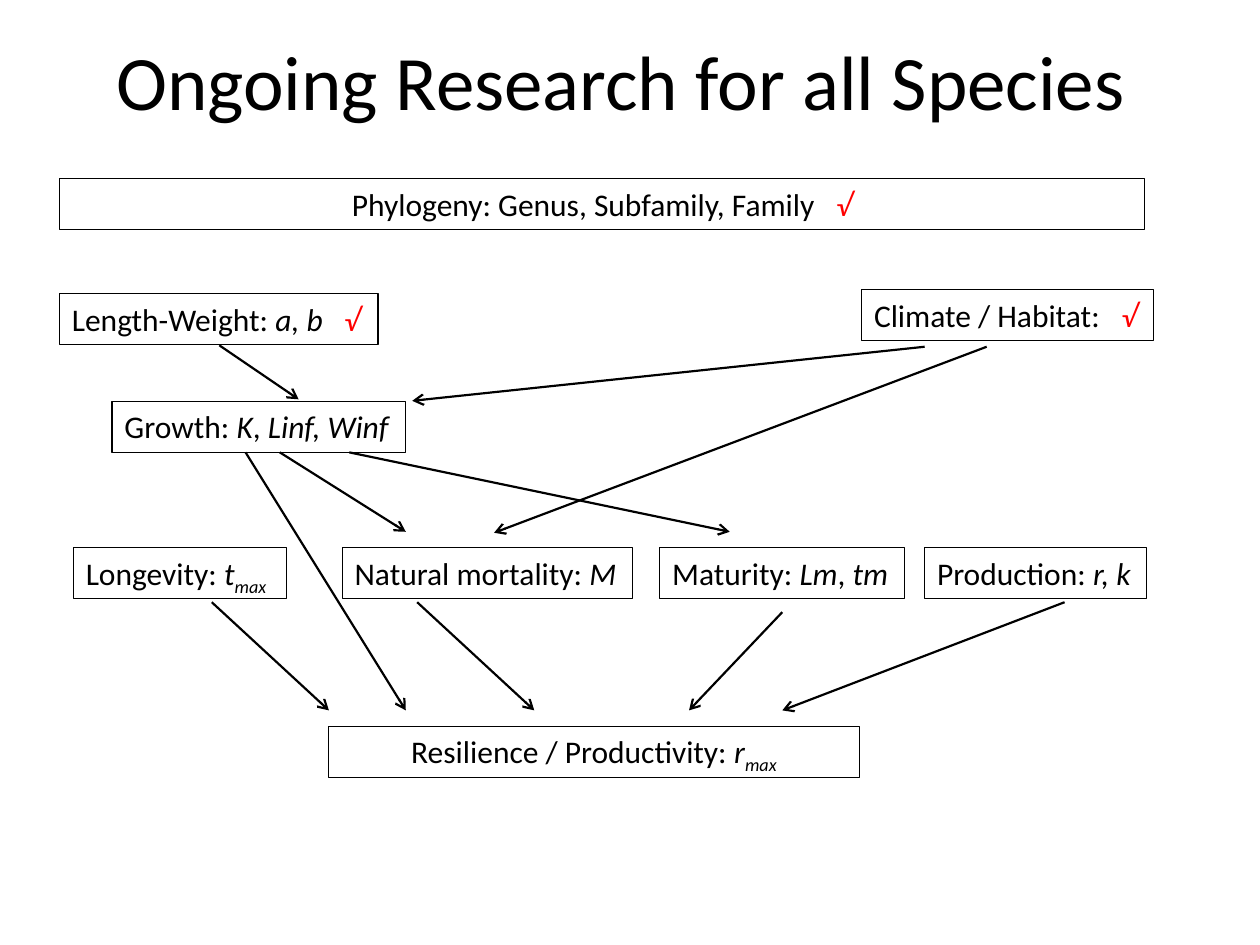
from lxml import etree
from pptx import Presentation
from pptx.dml.color import RGBColor
from pptx.enum import shapes, text
from pptx.oxml import ns
from pptx.util import Cm, Pt


def color(hex_value):
    return RGBColor.from_string(hex_value)


def add_run(paragraph, wording, style):
    """Append a run; style holds font values, plus optional spc and baseline."""
    run = paragraph.add_run()
    run.text = wording
    look = {"name": "Calibri", "size": Pt(18), "italic": False, **style}
    run.font.color.rgb = color(look.pop("color", "000000"))
    for key in ("spc", "baseline"):
        if key in look:
            run.font._element.set(key, look.pop(key))
    for key, value in look.items():
        setattr(run.font, key, value)


prs = Presentation()
prs.slide_width, prs.slide_height = Cm(25.4), Cm(19.05)
slide = prs.slides.add_slide(prs.slide_layouts[5])

# Title
title = slide.shapes.title
title.left, title.top, title.width, title.height = Cm(1.09), Cm(0), Cm(22.86), Cm(3.23)
title.text_frame.vertical_anchor = text.MSO_ANCHOR.MIDDLE
heading = title.text_frame.paragraphs[0]
heading.alignment = text.PP_ALIGN.CENTER
add_run(heading, "Ongoing Research for all Species", {"size": Pt(44)})

# Run styles shared by the boxes
plain = {}
italic = {"italic": True}
subscript = {"italic": True, "baseline": "-25000"}
done = [(" ", {"spc": "810"}), ("√", {"italic": True, "color": "FF0000"})]

# Boxes: left, top, width (cm), alignment, runs
left, center = text.PP_ALIGN.LEFT, text.PP_ALIGN.CENTER
trait_top = 11.04
boxes = [
    (1.2, 3.6, 21.87, center, [("Phylogeny: Genus, Subfamily, Family", plain), *done]),
    (1.2, 5.92, 6.42, left, [("Length-Weight: ", plain), ("a, b", italic), *done]),
    (17.37, 5.84, 5.89, left, [("Climate / Habitat:", plain), *done]),
    (2.26, 8.09, 5.91, left, [("Growth: ", plain), ("K", italic), (", ", plain),
                              ("Linf, Winf", italic)]),
    (1.48, trait_top, 4.3, left, [("Longevity: ", plain), ("t", italic),
                                  ("max", subscript)]),
    (6.9, trait_top, 5.85, left, [("Natural mortality: ", plain), ("M", italic)]),
    (13.3, trait_top, 4.93, left, [("Maturity: ", plain), ("Lm", italic), (", ", plain),
                                   ("tm", italic)]),
    (18.64, trait_top, 4.47, left, [("Production: ", plain), ("r, k", italic)]),
    (6.62, 14.64, 10.71, center, [("Resilience / Productivity: ", plain), ("r", italic),
                                  ("max", subscript)]),
]
for x, y, width, alignment, runs in boxes:
    box = slide.shapes.add_textbox(Cm(x), Cm(y), Cm(width), Cm(1.03))
    box.line.color.rgb = color("000000")
    box.line.width = Pt(0.75)
    frame = box.text_frame
    frame.word_wrap = True
    if alignment == left:
        frame.margin_right = 0
    label = frame.paragraphs[0]
    label.alignment = alignment
    for wording, style in runs:
        add_run(label, wording, style)

# Arrows: start x, start y, end x, end y (cm)
growth_bottom, trait_bottom, resilience_gap = 9.12, 12.14, 14.32
arrows = [
    (4.42, 6.96, 6.02, 8.05),                        # length-weight to growth
    (18.64, 6.99, 8.31, 8.08),                       # climate to growth
    (19.89, 6.99, 9.96, 10.74),                      # climate to mortality
    (5.64, growth_bottom, 8.18, 10.72),              # growth to mortality
    (7.04, growth_bottom, 14.71, 10.72),             # growth to maturity
    (4.95, growth_bottom, 8.18, resilience_gap),     # growth to resilience
    (4.27, trait_bottom, 6.63, resilience_gap),      # longevity to resilience
    (8.41, trait_bottom, 10.77, resilience_gap),     # mortality to resilience
    (15.77, 12.34, 13.89, resilience_gap),           # maturity to resilience
    (21.46, trait_bottom, 15.77, resilience_gap),    # production to resilience
]
for points in arrows:
    arrow = slide.shapes.add_connector(shapes.MSO_CONNECTOR.STRAIGHT, *map(Cm, points))
    arrow.line.color.rgb = color("000000")
    arrow.line.width = Pt(1.25)
    etree.SubElement(arrow.line._get_or_add_ln(), ns.qn("a:tailEnd"), type="arrow")
    etree.SubElement(arrow._element.spPr, ns.qn("a:effectLst"))

prs.save("out.pptx")
